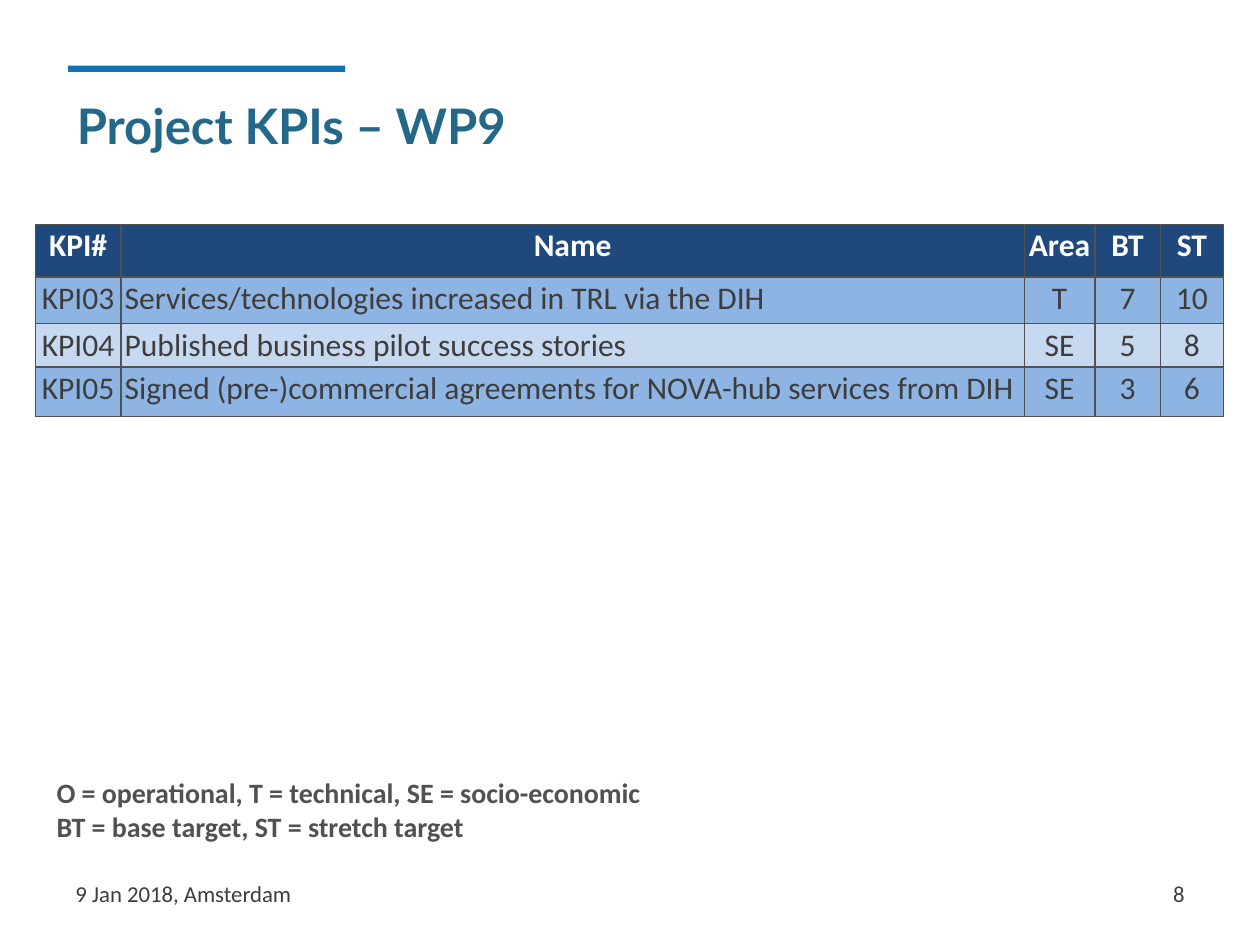
from dataclasses import dataclass

from lxml import etree
from pptx import Presentation
from pptx.dml.color import RGBColor
from pptx.enum.shapes import MSO_SHAPE
from pptx.enum.text import MSO_ANCHOR, PP_ALIGN
from pptx.oxml.ns import qn
from pptx.util import Inches, Pt

LEFT, CENTER, RIGHT = PP_ALIGN.LEFT, PP_ALIGN.CENTER, PP_ALIGN.RIGHT
TOP, MIDDLE = MSO_ANCHOR.TOP, MSO_ANCHOR.MIDDLE
RECTANGLE = MSO_SHAPE.RECTANGLE
TITLE_ONLY = 5


@dataclass(frozen=True)
class Theme:
    title_font: str = "Lato"
    body_font: str = "Calibri"
    accent: str = "0E71B4"
    title: str = "246889"
    text: str = "3D3D3D"
    muted: str = "515151"
    header_text: str = "FFFFFF"
    header_fill: str = "1F497D"
    bands: tuple = ("8EB4E3", "C6D9F1")
    title_size: int = 28
    table_size: int = 18
    legend_size: int = 16
    footer_size: int = 13
    border_width: int = 1


THEME = Theme()

HEADINGS = ["KPI#", "Name", "Area", "BT", "ST"]
KPIS = [
    ["KPI03", "Services/technologies increased in TRL via the DIH", "T", "7", "10"],
    ["KPI04", "Published business pilot success stories", "SE", "5", "8"],
    ["KPI05", "Signed (pre-)commercial agreements for NOVA-hub services from DIH",
     "SE", "3", "6"],
]
COLUMN_WIDTHS = [0.68, 7.17, 0.56, 0.52, 0.5]
ROW_HEIGHTS = [0.42, 0.37, 0.31, 0.39]
NAME_COLUMN = HEADINGS.index("Name")


def to_inches(box):
    return [Inches(length) for length in box]


def format_para(para, size, color, bold=False, align=LEFT, font=THEME.body_font):
    para.alignment = align
    para.font.name = font
    para.font.size = Pt(size)
    para.font.bold = bold
    para.font.color.rgb = RGBColor.from_string(color)


def add_text(page, box, lines, size, color, anchor=TOP, **style):
    frame = page.shapes.add_textbox(*to_inches(box)).text_frame
    frame.word_wrap = True
    frame.vertical_anchor = anchor
    frame.text = "\n".join(lines)
    for para in frame.paragraphs:
        format_para(para, size, color, **style)


def add_title(page, box, text):
    bar = page.shapes.add_shape(RECTANGLE, *to_inches((0.54, 0.52, 2.2, 0.05)))
    bar.shadow.inherit = False
    bar.fill.solid()
    bar.fill.fore_color.rgb = RGBColor.from_string(THEME.accent)
    bar.line.fill.background()

    title = page.shapes.title
    title.left, title.top, title.width, title.height = to_inches(box)
    title.text_frame.text = text
    title.text_frame.vertical_anchor = MIDDLE
    format_para(title.text_frame.paragraphs[0], THEME.title_size, THEME.title,
                bold=True, font=THEME.title_font)


def add_borders(cell):
    properties = cell._tc.get_or_add_tcPr()
    for position, side in enumerate(("lnL", "lnR", "lnT", "lnB")):
        line = etree.Element(qn(f"a:{side}"), w=str(Pt(THEME.border_width)))
        fill = etree.SubElement(line, qn("a:solidFill"))
        etree.SubElement(fill, qn("a:srgbClr"), val=THEME.muted)
        properties.insert(position, line)


def format_cell(cell, text, fill, color, bold, align):
    cell.text = text
    cell.margin_left = cell.margin_right = Inches(0.03)
    cell.margin_top = cell.margin_bottom = Inches(0.02)
    cell.vertical_anchor = TOP
    cell.fill.solid()
    cell.fill.fore_color.rgb = RGBColor.from_string(fill)
    format_para(cell.text_frame.paragraphs[0], THEME.table_size, color, bold, align)
    add_borders(cell)


def add_kpi_table(page, box):
    rows = [HEADINGS] + KPIS
    table = page.shapes.add_table(len(rows), len(HEADINGS), *to_inches(box)).table
    for column, width in zip(table.columns, COLUMN_WIDTHS):
        column.width = Inches(width)
    for row, height in zip(table.rows, ROW_HEIGHTS):
        row.height = Inches(height)
    for row_index, values in enumerate(rows):
        header = row_index == 0
        fill = THEME.header_fill if header else THEME.bands[(row_index - 1) % 2]
        color = THEME.header_text if header else THEME.text
        for column_index, value in enumerate(values):
            align = LEFT if column_index == NAME_COLUMN and not header else CENTER
            format_cell(table.cell(row_index, column_index), value, fill, color,
                        header, align)


def add_legend(page, box):
    lines = ["O = operational, T = technical, SE = socio-economic",
             "BT = base target, ST = stretch target"]
    add_text(page, box, lines, THEME.legend_size, THEME.muted, bold=True)


def add_footer(page, box):
    left, top, width, height = box
    part_width = 2.33
    parts = [(left, "9 Jan 2018, Amsterdam", LEFT),
             (left + width - part_width, "8", RIGHT)]
    for part_left, text, align in parts:
        add_text(page, (part_left, top, part_width, height), [text],
                 THEME.footer_size, THEME.text, anchor=MIDDLE, align=align)


def main():
    deck = Presentation()
    deck.slide_width, deck.slide_height = Inches(10), Inches(7.5)
    page = deck.slides.add_slide(deck.slide_layouts[TITLE_ONLY])
    add_title(page, (0.51, 0.68, 5.98, 0.63), "Project KPIs – WP9")
    add_kpi_table(page, (0.28, 1.78, sum(COLUMN_WIDTHS), sum(ROW_HEIGHTS)))
    add_legend(page, (0.35, 6.11, 9.15, 0.64))
    add_footer(page, (0.5, 6.89, 9, 0.4))
    deck.save("out.pptx")


if __name__ == "__main__":
    main()
